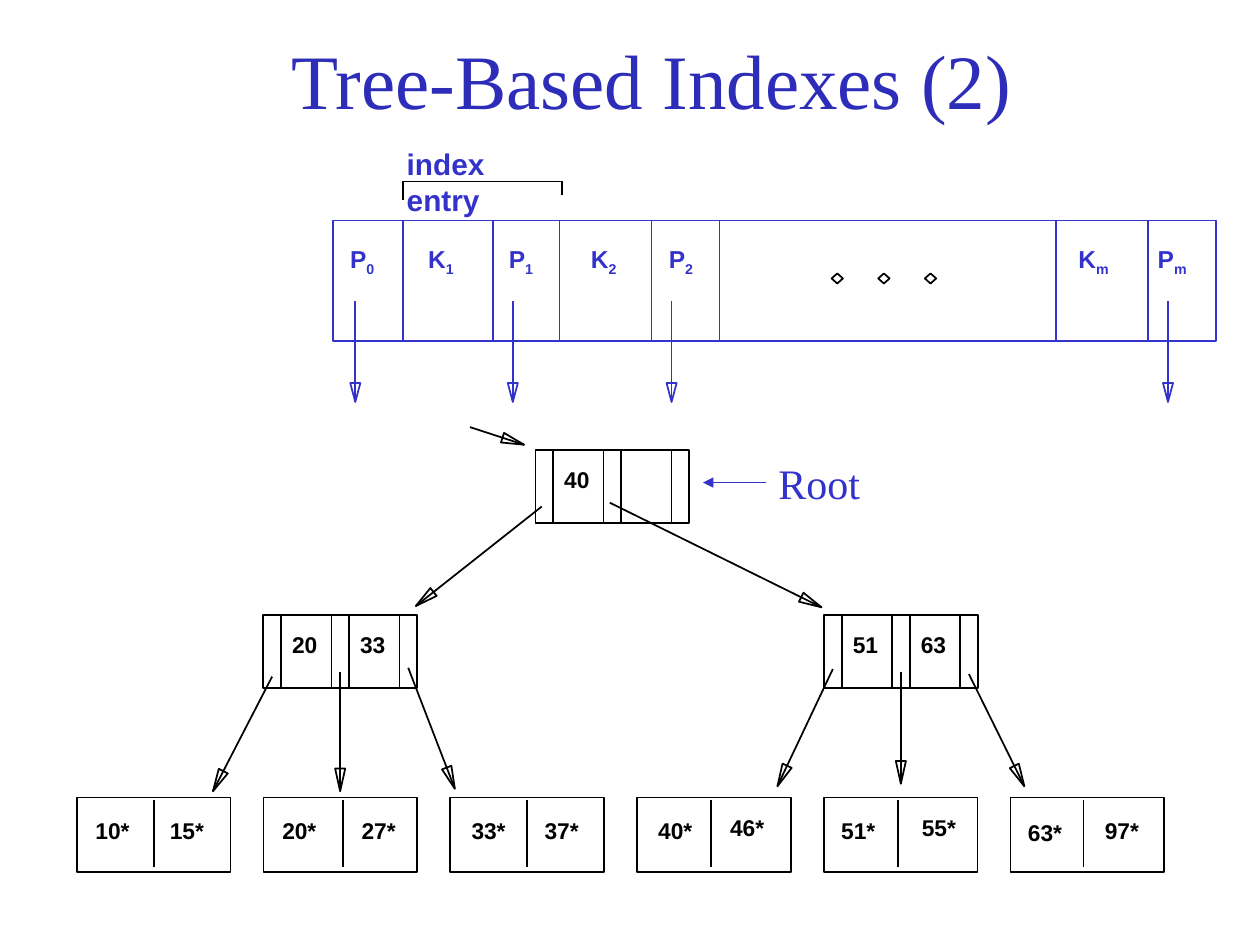
from math import hypot
from pptx import Presentation
from pptx.dml.color import RGBColor
from pptx.enum.shapes import MSO_CONNECTOR, MSO_SHAPE
from pptx.enum.text import MSO_ANCHOR, MSO_AUTO_SIZE, PP_ALIGN
from pptx.oxml.ns import qn
from pptx.util import Inches, Pt
from lxml import etree

LINE = MSO_CONNECTOR.STRAIGHT
RECT = MSO_SHAPE.RECTANGLE
DOT = MSO_SHAPE.DIAMOND
MIDDLE = MSO_ANCHOR.MIDDLE
CENTER = PP_ALIGN.CENTER
GROW = MSO_AUTO_SIZE.SHAPE_TO_FIT_TEXT

INK = {"title": "2D2DB9", "blue": "3333CC", "black": "000000"}
STYLES = {
    "title": {"name": "Times New Roman", "size": Pt(44), "bold": False},
    "field": {"name": "Arial", "size": Pt(14), "bold": True},
    "entry": {"name": "Arial", "size": Pt(17), "bold": True},
    "key": {"name": "Arial", "size": Pt(13), "bold": True},
    "root": {"name": "Times New Roman", "size": Pt(24), "bold": False},
}


def rgb(ink):
    return RGBColor.from_string(INK[ink])


def style(font, kind, ink):
    for name, value in STYLES[kind].items():
        setattr(font, name, value)
    font.color.rgb = rgb(ink)


def label(slide, box, text, kind, ink, sub="", wrap=False):
    frame = slide.shapes.add_textbox(*map(Inches, box)).text_frame
    frame.word_wrap = wrap
    frame.auto_size = GROW
    for part, base in ((text, None), (sub, "-25000")):
        if part:
            run = frame.paragraphs[0].add_run()
            run.text = part
            style(run.font, kind, ink)
            if base:
                run._r.get_or_add_rPr().set("baseline", base)


def outline(shape, ink):
    shape.shadow.inherit = False
    shape.fill.background()
    shape.line.color.rgb = rgb(ink)
    shape.line.width = Pt(1)


def frame(slide, box, ink, kind=RECT):
    outline(slide.shapes.add_shape(kind, *map(Inches, box)), ink)


def line(slide, start, end, ink, width=1):
    link = slide.shapes.add_connector(LINE, *map(Inches, (*start, *end)))
    link.line.color.rgb = rgb(ink)
    link.line.width = Pt(width)
    etree.SubElement(link._element.spPr, qn("a:effectLst"))
    return link


def arrow(slide, start, end, ink, size=0.18):
    line(slide, start, end, ink)
    (x1, y1), (x2, y2) = start, end
    span = hypot(x2 - x1, y2 - y1)
    dx, dy = (x2 - x1) / span, (y2 - y1) / span
    half = 0.04
    x, y = x2 - size * dx, y2 - size * dy
    spots = [(x - half * dy, y + half * dx), end, (x + half * dy, y - half * dx)]
    first, *rest = [tuple(map(Inches, spot)) for spot in spots]
    path = slide.shapes.build_freeform(*first)
    path.add_line_segments(rest, close=True)
    outline(path.convert_to_shape(), ink)


def add_title(slide, box):
    title = slide.shapes.title
    title.left, title.top, title.width, title.height = map(Inches, box)
    title.text_frame.text = "Tree-Based Indexes (2)"
    title.text_frame.vertical_anchor = MIDDLE
    para = title.text_frame.paragraphs[0]
    para.alignment = CENTER
    style(para.runs[0].font, "title", "title")


def add_page(slide, box):
    left, top, width, height = box
    frame(slide, box, "blue")
    for gap in (0.56, 1.27, 1.8, 2.53, 3.07, 5.74, 6.47):
        line(slide, (left + gap, top), (left + gap, top + height), "blue")
    fields = [("P", "0", 0.04), ("K", "1", 0.66), ("P", "1", 1.3), ("K", "2", 1.95),
              ("P", "2", 2.57), ("K", "m", 5.82), ("P", "m", 6.45)]
    for text, sub, gap in fields:
        wide = 0.46 if sub == "m" else 0.41
        label(slide, (left + gap, top + 0.14, wide, 0.34), text, "field", "blue", sub)
    for gap in (0.18, 1.43, 2.69, 6.63):
        x = left + gap
        arrow(slide, (x, top + 0.64), (x, top + 1.44), "blue", 0.15)
    for i in range(3):
        frame(slide, (left + 3.96 + 0.37 * i, top + 0.42, 0.09, 0.08), "black", DOT)


def add_brace(slide, box):
    left, top, width, height = box
    right = left + width
    line(slide, (left, top), (right, top), "black")
    line(slide, (left, top), (left, top + height), "black")
    line(slide, (right, top), (right, top + 0.11), "black")
    label(slide, (left - 0.07, top - 0.33, 1.4, 0.38), "index entry", "entry", "blue", wrap=True)


def add_node(slide, box, keys):
    left, top, width, height = box
    frame(slide, box, "black")
    for gap in (0.14, 0.54, 0.68, 1.08):
        line(slide, (left + gap, top), (left + gap, top + height), "black")
    for i, key in enumerate(keys):
        label(slide, (left + 0.13 + 0.54 * i, top + 0.08, 0.4, 0.32), key, "key", "black")


def add_leaf(slide, box, split, keys):
    left, top, width, height = box
    frame(slide, box, "black")
    line(slide, (left + split, top + 0.02), (left + split, top + height - 0.04), "black")
    for key, gap, drop in keys:
        label(slide, (left + gap, top + drop, 0.47, 0.32), key, "key", "black")


def add_tree(slide, box):
    left, top, width, height = box
    nodes = [(3.64, 0, ["40"]), (1.48, 1.31, ["20", "33"]), (5.93, 1.31, ["51", "63"])]
    for dx, dy, keys in nodes:
        add_node(slide, (left + dx, top + dy, 1.22, 0.58), keys)
    leaves = [
        (0.61, [("10*", 0.05, 0.1), ("15*", 0.64, 0.1)]),
        (0.63, [("20*", 0.05, 0.1), ("27*", 0.68, 0.1)]),
        (0.61, [("33*", 0.07, 0.1), ("37*", 0.65, 0.1)]),
        (0.59, [("40*", 0.07, 0.1), ("46*", 0.64, 0.08)]),
        (0.59, [("51*", 0.04, 0.1), ("55*", 0.68, 0.08)]),
        (0.58, [("63*", 0.04, 0.12), ("97*", 0.65, 0.1)]),
    ]
    wide, high = 1.22, 0.59
    step = (width - wide) / (len(leaves) - 1)
    for i, (split, keys) in enumerate(leaves):
        add_leaf(slide, (left + step * i, top + height - high, wide, high), split, keys)
    links = [
        (3.12, -0.18, 3.55, -0.04),
        (3.69, 0.45, 2.69, 1.24), (4.23, 0.42, 5.91, 1.25),
        (1.55, 1.8, 1.08, 2.71), (2.09, 1.76, 2.09, 2.71), (2.63, 1.73, 3, 2.69),
        (6, 1.74, 5.56, 2.67), (6.54, 1.76, 6.54, 2.65), (7.08, 1.78, 7.52, 2.67),
    ]
    for x1, y1, x2, y2 in links:
        arrow(slide, (left + x1, top + y1), (left + x2, top + y2), "black")


def add_root(slide, box):
    left, top, width, height = box
    label(slide, box, "Root", "root", "blue")
    y = top + height / 2
    link = line(slide, (left, y), (left - 0.5, y), "blue", 0.75)
    etree.SubElement(link.line._get_or_add_ln(), qn("a:tailEnd"), type="triangle")


def main():
    deck = Presentation()
    deck.slide_width, deck.slide_height = Inches(10), Inches(7.5)
    slide = deck.slides.add_slide(deck.slide_layouts[5])
    add_title(slide, (0.92, 0, 8.5, 1.25))
    add_page(slide, (2.64, 1.75, 7.01, 0.96))
    add_brace(slide, (3.2, 1.44, 1.26, 0.15))
    add_tree(slide, (0.61, 3.57, 8.63, 3.35))
    add_root(slide, (6.08, 3.58, 0.85, 0.5))
    deck.save("out.pptx")


if __name__ == "__main__":
    main()
